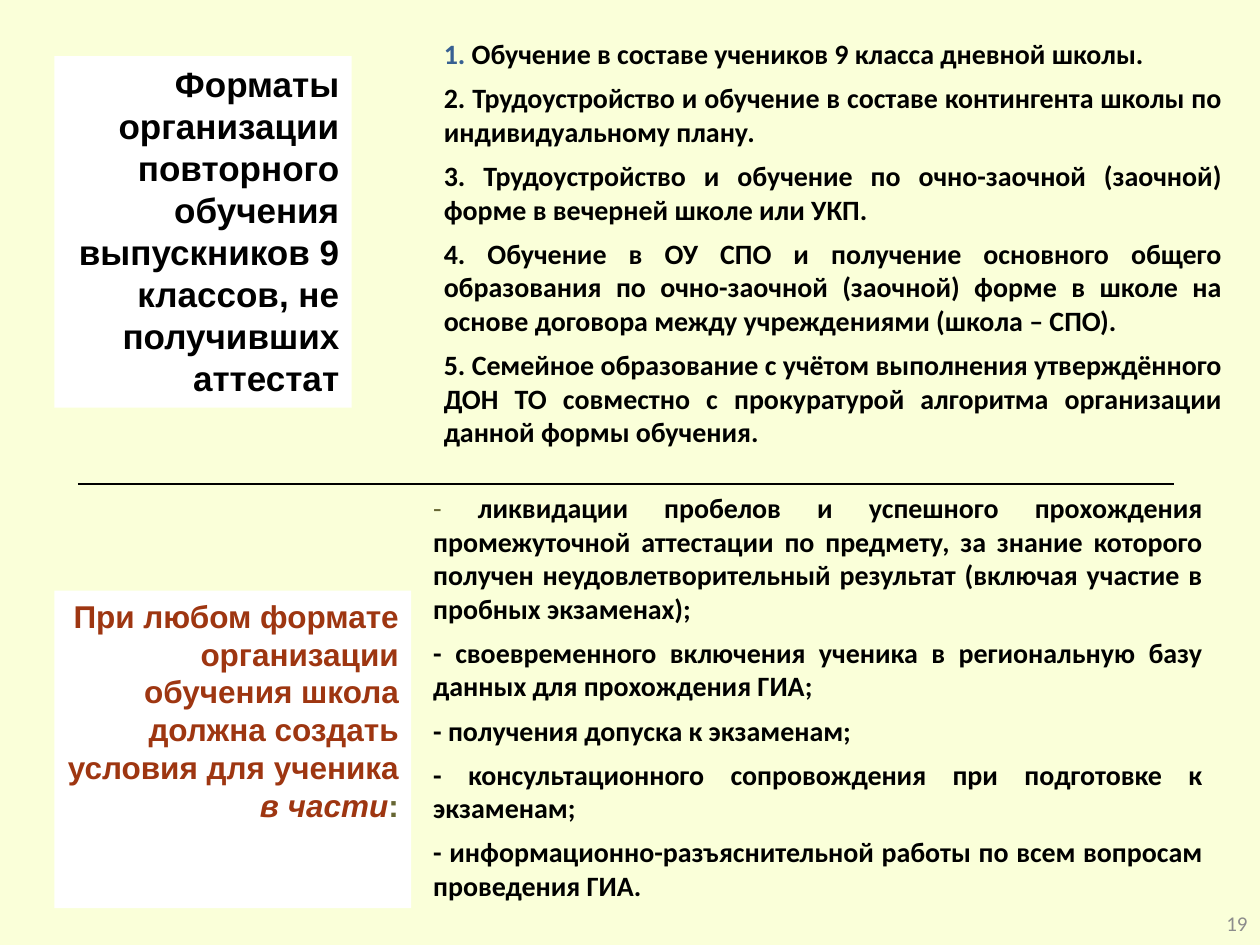
from lxml.etree import SubElement
from pptx import Presentation
from pptx.dml.color import RGBColor
from pptx.enum.shapes import MSO_CONNECTOR, MSO_SHAPE
from pptx.enum.text import MSO_ANCHOR, PP_ALIGN
from pptx.oxml.ns import qn
from pptx.util import Pt

BLACK = "000000"
RUST = "9E3611"
OLIVE = "666633"
BLUE = "376092"

# Each paragraph is a list of (text, format changes) runs
FORMATS = [
    [("1. ", {"color": BLUE}),
     ("Обучение в составе учеников 9 класса дневной школы.", {})],
    [("2. Трудоустройство и обучение в составе контингента школы по "
      "индивидуальному плану.", {})],
    [("3. Трудоустройство и обучение по очно-заочной (заочной) форме в "
      "вечерней школе или УКП.", {})],
    [("4. Обучение в ОУ СПО и получение основного общего образования по "
      "очно-заочной (заочной) форме в школе на основе договора между "
      "учреждениями (школа – СПО).", {})],
    [("5. Семейное образование с учётом выполнения утверждённого ДОН ТО "
      "совместно с прокуратурой алгоритма организации данной формы "
      "обучения.", {})],
]
CONDITIONS = [
    [("- ", {"color": OLIVE, "bold": False}),
     ("ликвидации пробелов и успешного прохождения промежуточной аттестации "
      "по предмету, за знание которого получен неудовлетворительный результат "
      "(включая участие в пробных экзаменах);", {})],
    [("- своевременного включения ученика в региональную базу данных для "
      "прохождения ГИА;", {})],
    [("- получения допуска к экзаменам;", {})],
    [("- консультационного сопровождения при подготовке к экзаменам;", {})],
    [("- информационно-разъяснительной работы по всем вопросам проведения "
      "ГИА.", {})],
]
FORMATS_TITLE = [
    [("Форматы организации повторного обучения выпускников 9 классов, "
      "не получивших аттестат", {})],
]
CONDITIONS_TITLE = [
    [("При любом формате организации обучения школа должна создать условия "
      "для ученика ", {})],
    [("в части", {"italic": True}), (":", {"color": OLIVE})],
]


def rgb(value):
    return RGBColor.from_string(value)


def add_run(paragraph, text, *, size, font="Calibri", color=BLACK, bold=True,
            italic=False):
    run = paragraph.add_run()
    run.text = text
    run.font.name = font
    run.font.size = Pt(size)
    run.font.bold = bold
    run.font.italic = italic
    run.font.color.rgb = rgb(color)


def fill_text(shape, paragraphs, *, align, anchor=MSO_ANCHOR.TOP,
              space_after=0, **font_format):
    frame = shape.text_frame
    frame.word_wrap = True
    frame.vertical_anchor = anchor
    for index, runs in enumerate(paragraphs):
        paragraph = frame.add_paragraph() if index else frame.paragraphs[0]
        paragraph.alignment = align
        paragraph.space_after = Pt(space_after)
        for text, changes in runs:
            add_run(paragraph, text, **{**font_format, **changes})


def add_text(slide, left, top, width, height, paragraphs, **text_format):
    box = slide.shapes.add_textbox(Pt(left), Pt(top), Pt(width), Pt(height))
    fill_text(box, paragraphs, **text_format)


def add_list(slide, left, top, width, height, paragraphs):
    add_text(slide, left, top, width, height, paragraphs,
             align=PP_ALIGN.JUSTIFY, space_after=6, size=16)


def add_title_panel(slide, left, top, width, height, paragraphs, **font_format):
    panel = slide.shapes.add_shape(MSO_SHAPE.RECTANGLE, Pt(left), Pt(top),
                                   Pt(width), Pt(height))
    panel.shadow.inherit = False
    panel.fill.solid()
    panel.fill.fore_color.rgb = rgb("FFFFFF")
    panel.line.fill.background()
    fill_text(panel, paragraphs, align=PP_ALIGN.RIGHT, font="Arial",
              **font_format)


def add_divider(slide, left, right, y):
    line = slide.shapes.add_connector(MSO_CONNECTOR.STRAIGHT, Pt(left), Pt(y),
                                      Pt(right), Pt(y))
    line.line.color.rgb = rgb(BLACK)
    line.line.width = Pt(0.75)
    SubElement(line._element.spPr, qn("a:effectLst"))


def main():
    presentation = Presentation()
    presentation.slide_width = Pt(720)
    presentation.slide_height = Pt(540)
    slide = presentation.slides.add_slide(presentation.slide_layouts[6])
    slide.background.fill.solid()
    slide.background.fill.fore_color.rgb = rgb("FAFFD9")

    # Slide number
    add_text(slide, 558, 513.5, 162, 28.5, [[("19", {})]],
             align=PP_ALIGN.RIGHT, anchor=MSO_ANCHOR.MIDDLE, size=12,
             color="8C8C8C", bold=False)

    # Upper half: formats of repeated study
    add_list(slide, 246.5, 17.5, 459, 245, FORMATS)
    add_title_panel(slide, 31, 32, 170, 201, FORMATS_TITLE, size=20)

    # Lower half: conditions the school provides
    add_title_panel(slide, 31, 337.5, 204, 181.5, CONDITIONS_TITLE, size=18,
                    color=RUST)
    add_list(slide, 240.5, 276.75, 454, 245, CONDITIONS)

    # Divider between the halves
    add_divider(slide, 44.5, 671, 276.5)

    presentation.save("out.pptx")


if __name__ == "__main__":
    main()
